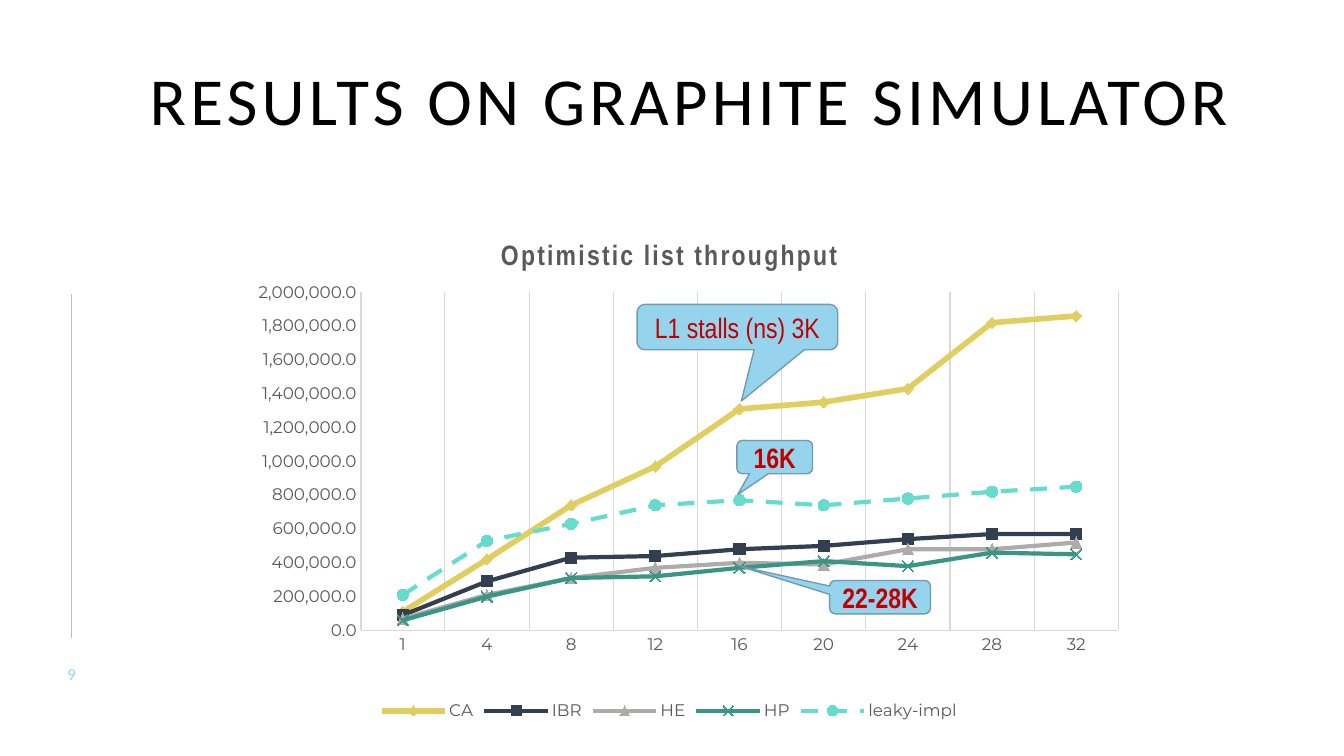
import pptx
import pptx.chart.data
import pptx.dml.color
import pptx.enum.chart
import pptx.enum.dml
import pptx.enum.shapes
import pptx.enum.text
import pptx.oxml
import pptx.oxml.ns
import pptx.util

RGB = pptx.dml.color.RGBColor
Pt = pptx.util.Pt
Mark = pptx.enum.chart.XL_MARKER_STYLE
Anchor = pptx.enum.text.MSO_ANCHOR

BLACK = RGB(0x00, 0x00, 0x00)
GRAY = RGB(0x59, 0x59, 0x59)
PALE = RGB(0xD9, 0xD9, 0xD9)
RULE = RGB(0xBF, 0xBF, 0xBF)
SKY = RGB(0x96, 0xD3, 0xED)
EDGE = RGB(0x6F, 0x9C, 0xAF)
RED = RGB(0xC0, 0x00, 0x00)
GOLD = RGB(0xE0, 0xCE, 0x61)
NAVY = RGB(0x33, 0x3F, 0x50)
ASH = RGB(0xAF, 0xAB, 0xAB)
GREEN = RGB(0x3A, 0x96, 0x84)
MINT = RGB(0x66, 0xDD, 0xCC)

# Content; boxes are left, top, width, height in percent of the slide
TITLE = "RESULTS ON GRAPHITE SIMULATOR"
HEAD = "Optimistic list throughput"
THREADS = ["1", "4", "8", "12", "16", "20", "24", "28", "32"]
UNIT = 10000
SERIES = [  # name, values in units, colour, line width, marker, dashed
    ("CA", (11, 42, 74, 97, 131, 135, 143, 182, 186), GOLD, 4, Mark.DIAMOND, False),
    ("IBR", (9, 29, 43, 44, 48, 50, 54, 57, 57), NAVY, 3, Mark.SQUARE, False),
    ("HE", (7, 21, 31, 37, 40, 39, 48, 48, 52), ASH, 3, Mark.TRIANGLE, False),
    ("HP", (6, 20, 31, 32, 37, 41, 38, 46, 45), GREEN, 3, Mark.X, False),
    ("leaky-impl", (21, 53, 63, 74, 77, 74, 78, 82, 85), MINT, 3, Mark.CIRCLE, True),
]
NOTES = [  # text, box, pointer, bold
    ("L1 stalls (ns) 3K", (47.4, 40.27, 14.93, 6), (0.02, 1.63), False),
    ("16K", (54.83, 58.27, 5.63, 4.4), (-0.49, 1.13), True),
    ("22-28K", (61.73, 76.8, 7.5, 4.4), (-1.38, -0.92), True),
]
TITLE_BOX = (5.78, 8.93, 91.05, 13.33)
CHART_BOX = (14.25, 29.2, 71.1, 66.67)
PAGE_BOX = (3.45, 87.73, 3.75, 2.67)
SIDE = (5.33, 38.93, 5.33, 84.4)
PLOT = {"x": 0.177, "y": 0.142, "w": 0.793, "h": 0.671}

deck = pptx.Presentation()
deck.slide_width = pptx.util.Inches(13.33)
deck.slide_height = pptx.util.Inches(7.5)
slide = deck.slides.add_slide(deck.slide_layouts[5])


def place(box):
    sizes = (deck.slide_width, deck.slide_height) * 2
    return [round(size * part / 100) for size, part in zip(sizes, box)]


def style(font, face, size, color, bold=False):
    font.name, font.size, font.bold = face, Pt(size), bold
    font.color.rgb = color


def write(frame, text, face, size, color, bold=False, gap=0):
    frame.text = text
    para = frame.paragraphs[0]
    para.alignment = pptx.enum.text.PP_ALIGN.CENTER
    run = para.runs[0]
    style(run.font, face, size, color, bold)
    if gap:
        run.font._element.set("spc", str(gap * 100))


def trim(frame, anchor):
    frame.margin_left = frame.margin_right = 0
    frame.margin_top = frame.margin_bottom = 0
    frame.vertical_anchor = anchor
    frame.word_wrap = True


def stroke(line, color, width):
    line.color.rgb = color
    line.width = Pt(width)


# Side rule
rule = slide.shapes.add_connector(
    pptx.enum.shapes.MSO_CONNECTOR.STRAIGHT, *place(SIDE))
stroke(rule.line, RULE, 1)
rule._element.spPr.append(pptx.oxml.parse_xml(
    "<a:effectLst %s/>" % pptx.oxml.ns.nsdecls("a")))

# Title
title = slide.shapes.title
title.left, title.top, title.width, title.height = place(TITLE_BOX)
trim(title.text_frame, Anchor.TOP)
write(title.text_frame, TITLE, "Calibri", 48, BLACK, gap=3)
title.text_frame.paragraphs[0].line_spacing = 0.9

# Chart
data = pptx.chart.data.CategoryChartData(number_format="#,##0.0")
data.categories = THREADS
for name, vals, *rest in SERIES:
    data.add_series(name, [val * UNIT for val in vals])
chart = slide.shapes.add_chart(
    pptx.enum.chart.XL_CHART_TYPE.LINE_MARKERS, *place(CHART_BOX), data).chart
style(chart.font, "Arial Narrow", 10, BLACK)
chart.has_title = True
write(chart.chart_title.text_frame, HEAD, "Arial Narrow", 20, GRAY, True, 1.5)
chart.chart_title.text_frame.paragraphs[0].runs[0].font._element.set("spc", "150")
chart.chart_title.include_in_layout = False
chart.has_legend = True
chart.legend.position = pptx.enum.chart.XL_LEGEND_POSITION.BOTTOM
chart.legend.include_in_layout = False
style(chart.legend.font, "Montserrat", 12, GRAY)

# Axes
cats, scale = chart.category_axis, chart.value_axis
for axis, width in ((cats, 0.75), (scale, 1.25)):
    axis.major_tick_mark = pptx.enum.chart.XL_TICK_MARK.NONE
    style(axis.tick_labels.font, "Montserrat", 12, GRAY)
    stroke(axis.format.line, PALE, width)
cats.has_major_gridlines = True
stroke(cats.major_gridlines.format.line, PALE, 0.75)
scale.has_major_gridlines = False
scale.minimum_scale, scale.maximum_scale = 0, 200 * UNIT
scale.major_unit = 20 * UNIT
scale.tick_labels.number_format = "#,##0.0"
scale.tick_labels.number_format_is_linked = False

# Lines and markers
plot = chart.plots[0]
plot.vary_by_categories = False
for line, (name, vals, color, width, mark, dashed) in zip(plot.series, SERIES):
    line.smooth = False
    stroke(line.format.line, color, width)
    if dashed:
        line.format.line.dash_style = pptx.enum.dml.MSO_LINE.DASH
    line.marker.style, line.marker.size = mark, 8
    line.marker.format.fill.solid()
    line.marker.format.fill.fore_color.rgb = color
    stroke(line.marker.format.line, color, 0.75)

# Inner plot area
area = chart._chartSpace.chart.plotArea
for old in area.findall(pptx.oxml.ns.qn("c:layout")):
    area.remove(old)
modes = "".join('<c:%sMode val="edge"/>' % key for key in "xy")
parts = "".join('<c:%s val="%s"/>' % pair for pair in PLOT.items())
area.insert(0, pptx.oxml.parse_xml(
    '<c:layout %s><c:manualLayout><c:layoutTarget val="inner"/>%s%s'
    "</c:manualLayout></c:layout>" % (pptx.oxml.ns.nsdecls("c"), modes, parts)))

# Page number
page = slide.shapes.add_textbox(*place(PAGE_BOX)).text_frame
trim(page, Anchor.MIDDLE)
write(page, "9", "Calibri", 12, SKY, gap=2)

# Callouts
for text, box, point, bold in NOTES:
    note = slide.shapes.add_shape(
        pptx.enum.shapes.MSO_SHAPE.ROUNDED_RECTANGULAR_CALLOUT, *place(box))
    note.adjustments[0], note.adjustments[1] = point
    note.shadow.inherit = False
    note.fill.solid()
    note.fill.fore_color.rgb = SKY
    stroke(note.line, EDGE, 1)
    note.text_frame.word_wrap = False
    note.text_frame.vertical_anchor = Anchor.MIDDLE
    write(note.text_frame, text, "Arial Narrow", 20, RED, bold)

deck.save("out.pptx")
